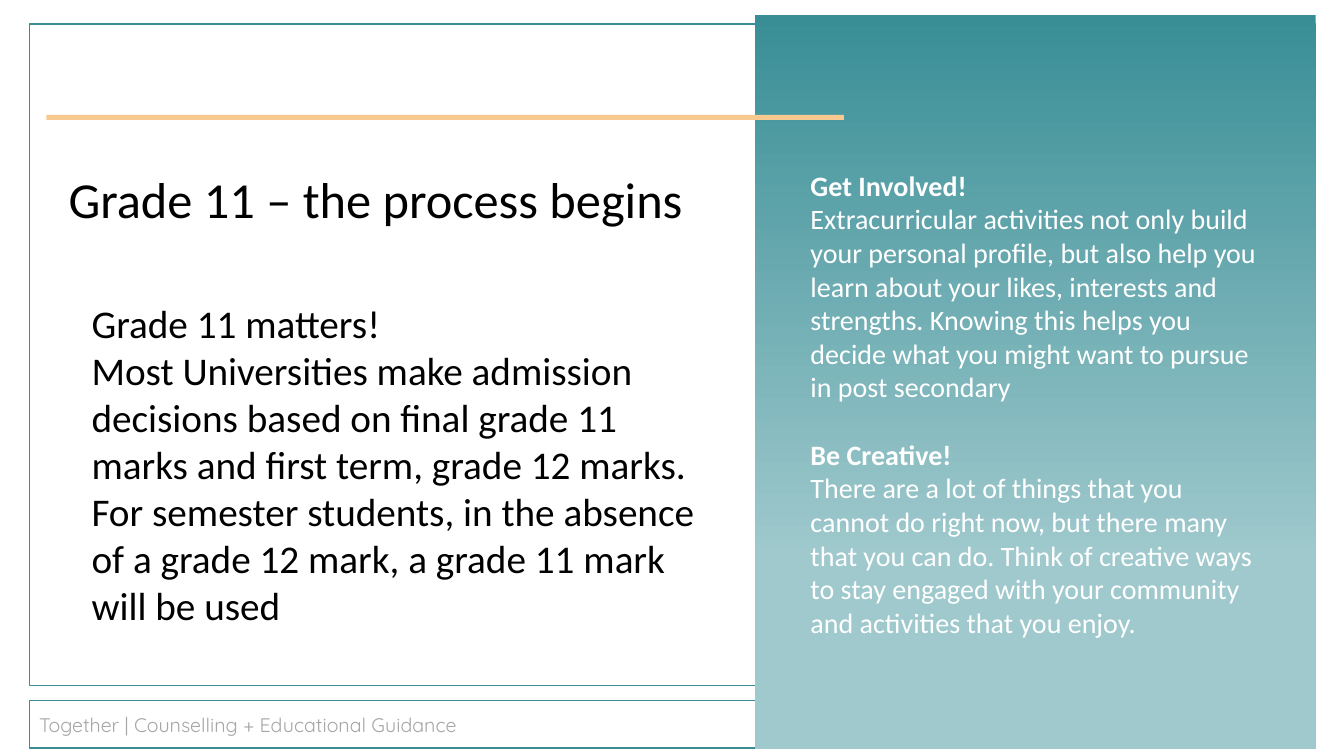
from pptx import Presentation
from pptx import util as u
from pptx.dml.color import RGBColor
from pptx.enum import shapes, text

PX = 9144  # 100 px to the inch
TITLE_ONLY = 5

TEAL = RGBColor(0x39, 0x8E, 0x96)
PALE_TEAL = RGBColor(0x9F, 0xC9, 0xCD)
SAND = RGBColor(0xF8, 0xCA, 0x90)
GRAY = RGBColor(0xA6, 0xA6, 0xA6)
BLACK = RGBColor(0x00, 0x00, 0x00)
WHITE = RGBColor(0xFF, 0xFF, 0xFF)


def px(*lengths):
    return [u.Emu(length * PX) for length in lengths]


def write(frame, paragraphs, size, color, font="Calibri", bold=(), gaps=None,
          anchor=text.MSO_ANCHOR.TOP, line_spacing=None):
    """Fill a frame; bold lists paragraph indexes, gaps maps index to space before."""
    frame.word_wrap = True
    frame.auto_size = text.MSO_AUTO_SIZE.NONE
    frame.vertical_anchor = anchor
    for index, words in enumerate(paragraphs):
        paragraph = frame.paragraphs[0] if index == 0 else frame.add_paragraph()
        paragraph.alignment = text.PP_ALIGN.LEFT
        if line_spacing:
            paragraph.line_spacing = line_spacing
        if gaps and index in gaps:
            paragraph.space_before = u.Pt(gaps[index])
        run = paragraph.add_run()
        run.text = words
        run.font.name = font
        run.font.size = u.Pt(size)
        run.font.bold = index in bold
        run.font.color.rgb = color


class GuidanceSlide:
    def __init__(self, width, height):
        self.deck = Presentation()
        self.deck.slide_width, self.deck.slide_height = px(width, height)
        self.slide = self.deck.slides.add_slide(self.deck.slide_layouts[TITLE_ONLY])

    def title(self, box, words, **style):
        heading = self.slide.shapes.title
        heading.left, heading.top, heading.width, heading.height = px(*box)
        write(heading.text_frame, [words], **style)

    def rectangle(self, box, fill=None, line=None):
        rect = self.slide.shapes.add_shape(shapes.MSO_SHAPE.RECTANGLE, *px(*box))
        rect.shadow.inherit = False
        if fill:
            rect.fill.solid()
            rect.fill.fore_color.rgb = fill
        else:
            rect.fill.background()
        if line:
            rect.line.color.rgb = line
            rect.line.width = u.Pt(1)
        else:
            rect.line.fill.background()
        return rect

    def gradient_panel(self, box, top, bottom, fade_end):
        """Rectangle fading downwards, flat in the bottom colour after fade_end."""
        panel = self.rectangle(box)
        panel.fill.gradient()
        panel.fill.gradient_angle = 270
        first, last = panel.fill.gradient_stops
        first.color.rgb, first.position = top, 0
        last.color.rgb, last.position = bottom, fade_end

    def text_box(self, box, paragraphs, **style):
        frame = self.slide.shapes.add_textbox(*px(*box)).text_frame
        write(frame, paragraphs, **style)


def main():
    page = GuidanceSlide(1333, 750)

    footer = page.rectangle((29, 695, 1276, 47), line=TEAL)
    write(footer.text_frame, ["Together | Counselling + Educational Guidance"],
          size=14, color=GRAY, font="Quicksand", anchor=text.MSO_ANCHOR.MIDDLE)
    page.rectangle((29, 24, 1276, 656), line=TEAL)

    page.text_box((81, 292, 635, 345), [
        "Grade 11 matters!",
        "Most Universities make admission decisions based on final grade 11 marks "
        "and first term, grade 12 marks. For semester students, in the absence of "
        "a grade 12 mark, a grade 11 mark will be used",
    ], size=28, color=BLACK)

    page.gradient_panel((749, 15, 556, 728), TEAL, PALE_TEAL, fade_end=0.74)
    page.rectangle((46, 114, 791, 5), fill=SAND)

    page.title((58, 143, 671, 115), "Grade 11 – the process begins", size=36,
               color=BLACK, anchor=text.MSO_ANCHOR.MIDDLE, line_spacing=0.9)

    page.text_box((794, 162, 471, 512), [
        "Get Involved!",
        "Extracurricular activities not only build your personal profile, but also "
        "help you learn about your likes, interests and strengths. Knowing this "
        "helps you decide what you might want to pursue in post secondary",
        "Be Creative!",
        "There are a lot of things that you cannot do right now, but there many "
        "that you can do. Think of creative ways to stay engaged with your "
        "community and activities that you enjoy.",
    ], size=20, color=WHITE, bold=(0, 2), gaps={2: 24})

    page.deck.save("out.pptx")


if __name__ == "__main__":
    main()
